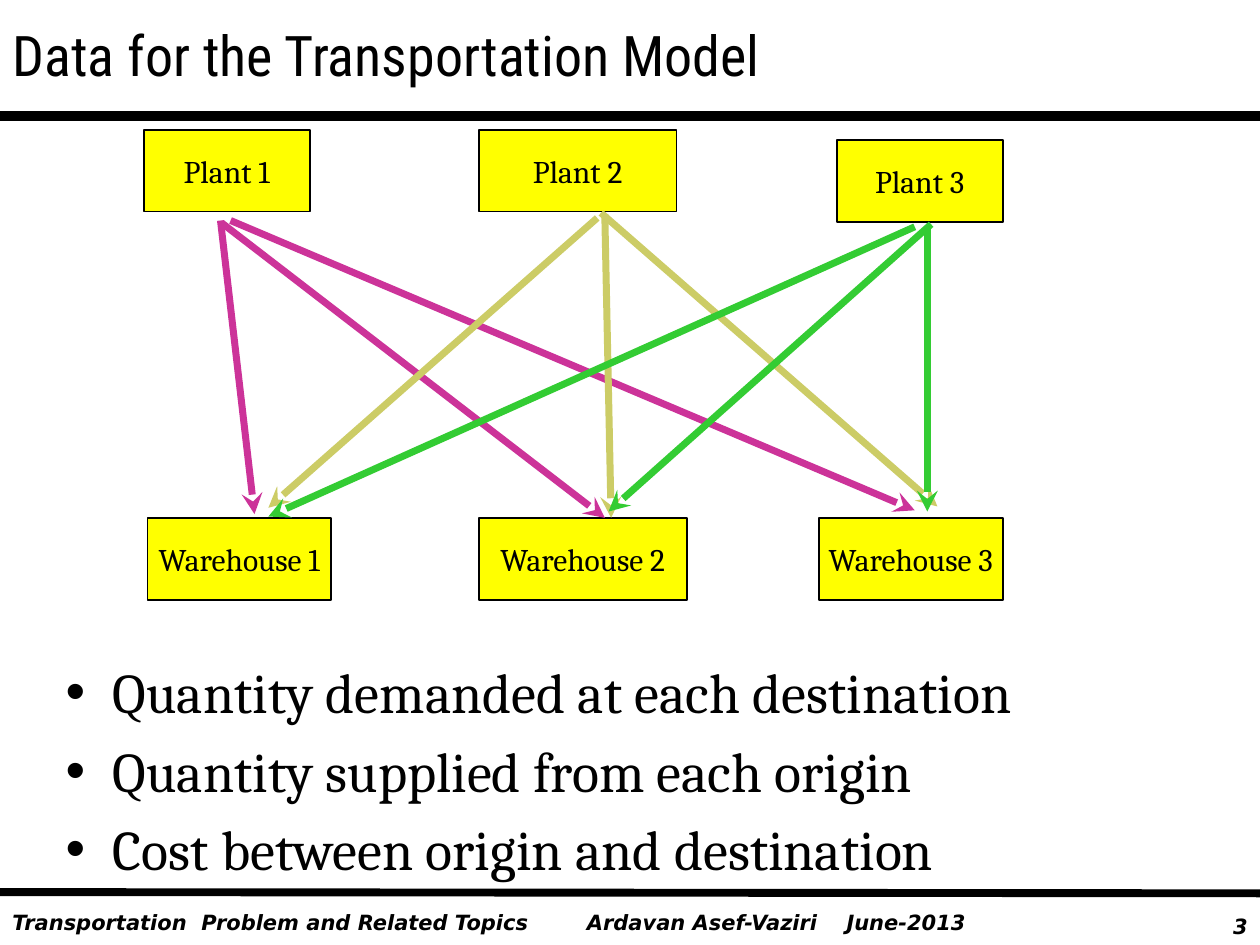
from lxml import etree
from pptx import Presentation
from pptx.dml.color import RGBColor
from pptx.enum import shapes, text
from pptx.oxml.ns import qn
from pptx.util import Inches, Pt


def add_run(p, words, size, font, bold_italic=False):
    r = p.add_run()
    r.text = words
    r.font.size = Pt(size)
    r.font.name = font
    r.font.bold = r.font.italic = bold_italic
    r.font.color.rgb = RGBColor.from_string("000000")


def add_line(start, end, color, width, arrow=False):
    line = s.shapes.add_connector(
        shapes.MSO_CONNECTOR.STRAIGHT, *[Inches(v) for v in (*start, *end)])
    line.line.color.rgb = RGBColor.from_string(color)
    line.line.width = Pt(width)
    sp_pr = line._element.spPr
    if arrow:
        etree.SubElement(sp_pr.find(qn("a:ln")), qn("a:tailEnd"), type="stealth")
    etree.SubElement(sp_pr, qn("a:effectLst"))


prs = Presentation()
prs.slide_width, prs.slide_height = Inches(10), Inches(7.5)
s = prs.slides.add_slide(prs.slide_layouts[1])

# Footer and rules
footer = [
    (0, 7.17, 4.67, "Transportation  Problem and Related Topics", text.PP_ALIGN.LEFT),
    (4.56, 7.17, 2.06, "Ardavan Asef-Vaziri", text.PP_ALIGN.LEFT),
    (6.62, 7.17, 1.29, "June-2013", text.PP_ALIGN.LEFT),
    (9.25, 7.2, 0.75, "3", text.PP_ALIGN.RIGHT),
]
for left, top, width, words, align in footer:
    sp = s.shapes.add_textbox(Inches(left), Inches(top), Inches(width), Inches(0.3))
    sp.text_frame.word_wrap = True
    p = sp.text_frame.paragraphs[0]
    p.alignment = align
    add_run(p, words, 12, "DejaVu Sans", bold_italic=True)

add_line((0, 0.92), (10, 0.92), "000000", 6)
add_line((0, 7.08), (10, 7.09), "000000", 4.5)

# Plants above, warehouses below
boxes = [
    ("Plant 1", 1.14, 1.03, 1.32),
    ("Plant 2", 3.8, 1.03, 1.57),
    ("Plant 3", 6.64, 1.11, 1.32),
    ("Warehouse 1", 1.17, 4.11, 1.46),
    ("Warehouse 2", 3.8, 4.11, 1.65),
    ("Warehouse 3", 6.5, 4.11, 1.46),
]
for name, left, top, width in boxes:
    sp = s.shapes.add_shape(shapes.MSO_SHAPE.RECTANGLE, Inches(left), Inches(top),
                            Inches(width), Inches(0.65))
    sp.shadow.inherit = False
    sp.fill.solid()
    sp.fill.fore_color.rgb = RGBColor.from_string("FFFF00")
    sp.line.color.rgb = RGBColor.from_string("000000")
    sp.line.width = Pt(1)
    tf = sp.text_frame
    tf.word_wrap = False
    tf.vertical_anchor = text.MSO_ANCHOR.MIDDLE
    p = tf.paragraphs[0]
    p.alignment = text.PP_ALIGN.CENTER
    add_run(p, name, 18, "Cambria")

# Routes from each plant to every warehouse
routes = {
    "CC3399": [((1.75, 1.75), (2.02, 4.08)), ((1.76, 1.77), (4.8, 4.11)),
               ((1.83, 1.75), (7.26, 4.05))],
    "CCCC66": [((4.74, 1.73), (2.13, 4.03)), ((4.8, 1.7), (4.85, 4.11)),
               ((4.77, 1.69), (7.44, 4.02))],
    "33CC33": [((7.36, 1.81), (7.36, 4.06)), ((7.39, 1.78), (4.83, 4.06)),
               ((7.26, 1.8), (2.13, 4.1))],
}
for color, ends in routes.items():
    for plant, warehouse in ends:
        add_line(plant, warehouse, color, 4, arrow=True)

# Title and list
title, body = s.shapes.title, s.placeholders[1]
title.left, title.top, title.width, title.height = [
    Inches(v) for v in (0, 0.11, 9.83, 0.64)]
tf = title.text_frame
tf.auto_size = text.MSO_AUTO_SIZE.NONE
tf.vertical_anchor = text.MSO_ANCHOR.MIDDLE
p = tf.paragraphs[0]
p.alignment = text.PP_ALIGN.LEFT
add_run(p, "Data for the Transportation Model", 32, "Roboto Condensed")

body.left, body.top, body.width, body.height = [
    Inches(v) for v in (0.42, 5.17, 8.5, 2.08)]
tf = body.text_frame
tf.auto_size = text.MSO_AUTO_SIZE.NONE
needs = ["Quantity demanded at each destination",
         "Quantity supplied from each origin",
         "Cost between origin and destination"]
for i, need in enumerate(needs):
    p = tf.add_paragraph() if i else tf.paragraphs[0]
    add_run(p, need, 32, "Cambria")

prs.save("out.pptx")
